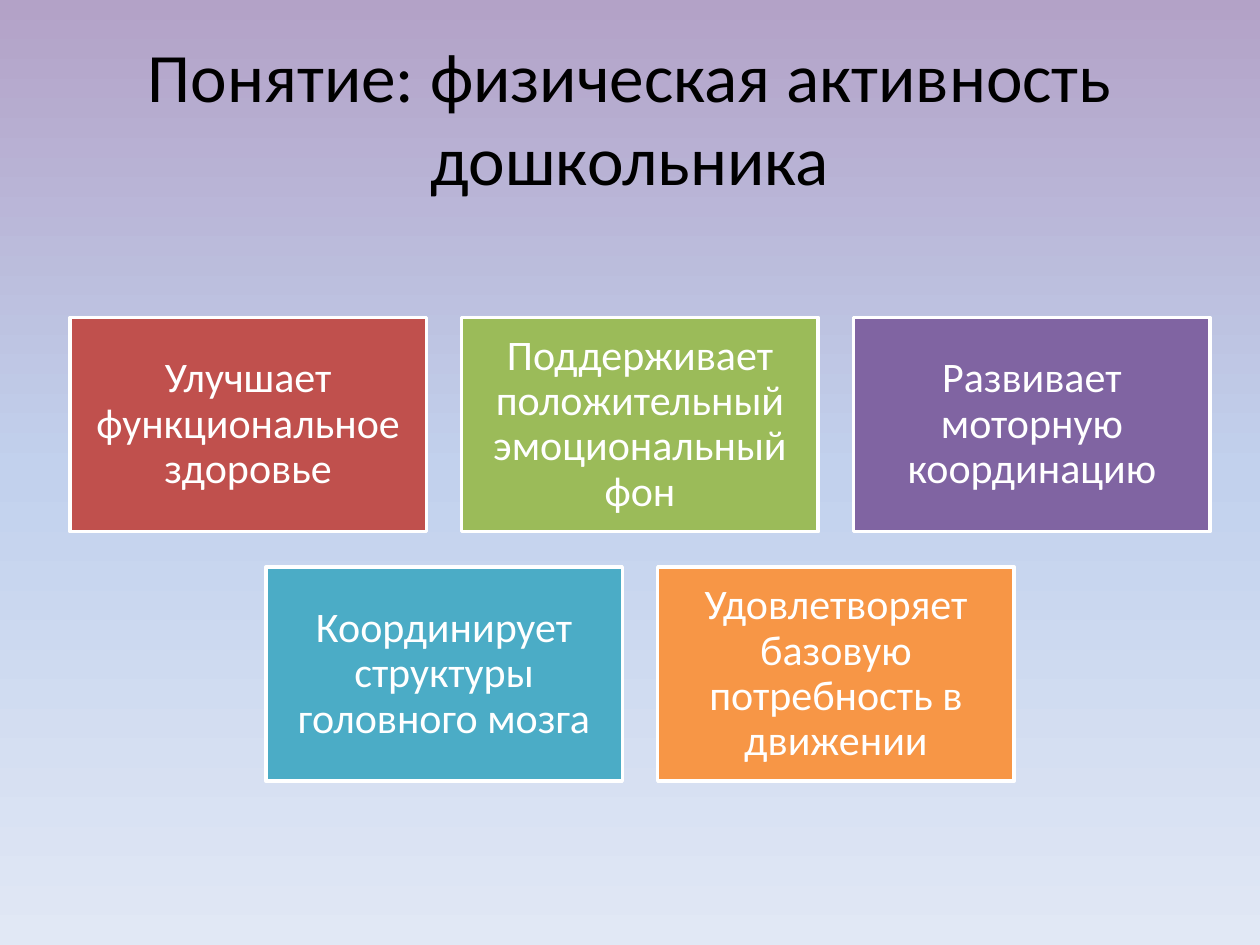
import copy

import pptx
import pptx.dml.color
import pptx.enum.shapes
import pptx.enum.text
import pptx.oxml.ns
import pptx.util


def rgb(value):
    return pptx.dml.color.RGBColor.from_string(value)


def inches(*values):
    return [pptx.util.Inches(value) for value in values]


class SlideBuilder:
    font = "Calibri"
    white = "FFFFFF"
    black = "000000"

    def __init__(self, prs):
        self.s = prs.slides.add_slide(prs.slide_layouts[5])

    def background(self, colors):
        """Vertical gradient with evenly spaced colours, top to bottom."""
        fill = self.s.background.fill
        fill.gradient()
        fill.gradient_angle = 270
        stops = self.s.element.find(".//" + pptx.oxml.ns.qn("a:gsLst"))
        while len(stops) < len(colors):
            stops.append(copy.deepcopy(stops[-1]))
        for i, (stop, color) in enumerate(zip(fill.gradient_stops, colors)):
            stop.position = i / (len(colors) - 1)
            stop.color.rgb = rgb(color)

    def set_text(self, sp, text, size, color, spacing=1.0):
        tf = sp.text_frame
        tf.text = text
        tf.word_wrap = True
        tf.auto_size = pptx.enum.text.MSO_AUTO_SIZE.NONE
        tf.vertical_anchor = pptx.enum.text.MSO_ANCHOR.MIDDLE
        p = tf.paragraphs[0]
        p.alignment = pptx.enum.text.PP_ALIGN.CENTER
        p.line_spacing = spacing
        r = p.runs[0]
        r.font.name = self.font
        r.font.size = pptx.util.Pt(size)
        r.font.color.rgb = rgb(color)

    def title(self, text, x, y, w, h):
        sp = self.s.shapes.title
        sp.left, sp.top, sp.width, sp.height = inches(x, y, w, h)
        self.set_text(sp, text, 39.6, self.black)

    def card(self, text, x, y, w, h, color):
        sp = self.s.shapes.add_shape(
            pptx.enum.shapes.MSO_SHAPE.RECTANGLE, *inches(x, y, w, h))
        sp.shadow.inherit = False
        sp.fill.solid()
        sp.fill.fore_color.rgb = rgb(color)
        sp.line.color.rgb = rgb(self.white)
        sp.line.width = pptx.util.Pt(2)
        tf = sp.text_frame
        tf.margin_left, tf.margin_top, tf.margin_right, tf.margin_bottom = inches(
            0.1, 0.1, 0.1, 0.1)
        self.set_text(sp, text, 24, self.white, 0.9)


def main():
    prs = pptx.Presentation()
    prs.slide_width, prs.slide_height = inches(10, 7.5)

    # Background and title
    slide = SlideBuilder(prs)
    slide.background(["B3A2C7", "C2D1ED", "E1E8F5"])
    slide.title("Понятие: физическая активность дошкольника", 0.5, 0.3, 9, 1.25)

    # Rows of cards, each centred on the same axis
    rows = [
        [("Улучшает функциональное здоровье", "C0504D"),
         ("Поддерживает положительный эмоциональный фон", "9BBB59"),
         ("Развивает моторную координацию", "8064A2")],
        [("Координирует структуры головного мозга", "4BACC6"),
         ("Удовлетворяет базовую потребность в движении", "F79646")],
    ]
    width, height, gap = 2.83, 1.7, 0.28
    center, top = 5.08, 2.52
    for i, row in enumerate(rows):
        left = center - (len(row) * (width + gap) - gap) / 2
        for j, (text, color) in enumerate(row):
            slide.card(text, left + j * (width + gap), top + i * (height + gap),
                       width, height, color)

    prs.save("out.pptx")


if __name__ == "__main__":
    main()
